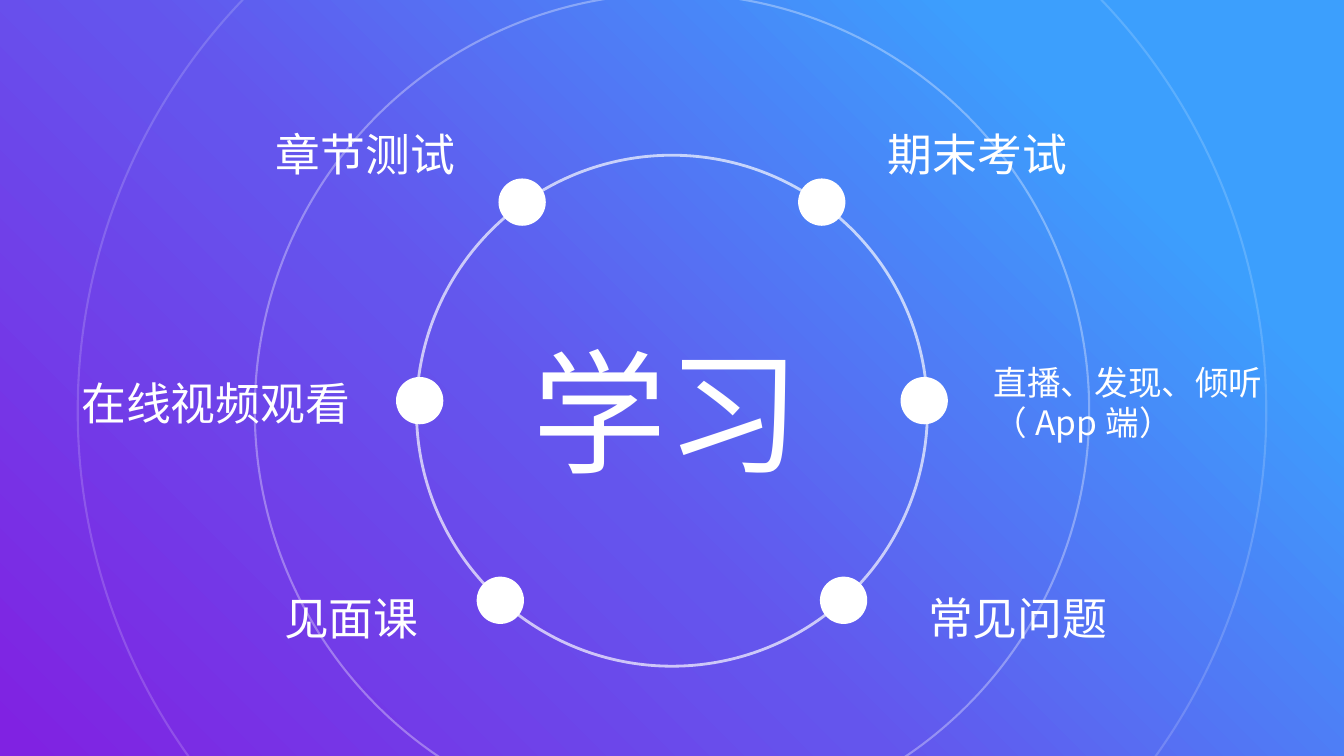
from lxml import etree
from pptx import Presentation
from pptx.dml.color import RGBColor
from pptx.enum.shapes import MSO_SHAPE
from pptx.enum.text import MSO_ANCHOR, MSO_AUTO_SIZE, PP_ALIGN
from pptx.oxml.ns import qn
from pptx.util import Pt

OVAL = MSO_SHAPE.OVAL
TOP = MSO_ANCHOR.TOP
LEFT = PP_ALIGN.LEFT
GROW = MSO_AUTO_SIZE.SHAPE_TO_FIT_TEXT

TITLE_ONLY = 5
FONT = "Noto Sans CJK SC"
COLOURS = {"white": "FFFFFF", "purple": "8022E2", "violet": "6455ED", "blue": "3C9FFD"}
GRADIENT = [(1, "purple"), (42, "violet"), (82, "blue")]

CENTRE = (480, 293.4)
# diameter, line width, opacity in percent
RINGS = [(365, 2, 68), (596, 1.5, 32), (849, 1.5, 17)]
DOT_SIZE = 33.8
# distance of each mirrored pair of dots from the centre: sideways, down
DOT_PAIRS = [(107, -149), (122.6, 135.4), (180.2, -7.2)]
# text, size, box (left, top, width, height)
TOPIC = ("学习", 96, (373, 231.8, 213.8, 123.8))
LABELS = [
    (" 在线视频观看", 32, (43.9, 265, 242.6, 46)),
    ("章节测试", 32, (190, 87.1, 160.6, 46)),
    ("见面课", 32, (195.8, 418.3, 130.3, 46)),
    ("期末考试", 32, (627.1, 87.1, 151.2, 46)),
    ("直播、发现、倾听（App端）", 24, (702.7, 254.9, 275.8, 65.5)),
    ("常见问题", 32, (655.9, 418.3, 162.7, 46)),
]


def colour(name):
    return RGBColor.from_string(COLOURS[name])


def paint_background(slide):
    fill = slide.background.fill
    fill.gradient()
    fill.gradient_angle = 45
    stops = slide.background._cSld.find(".//" + qn("a:gsLst"))
    for stop in list(stops):
        stops.remove(stop)
    for percent, name in GRADIENT:
        stop = etree.SubElement(stops, qn("a:gs"), pos=str(percent * 1000))
        etree.SubElement(stop, qn("a:srgbClr"), val=COLOURS[name])


def add_circle(shapes, centre, diameter):
    x, y = centre
    circle = shapes.add_shape(OVAL, Pt(x - diameter / 2), Pt(y - diameter / 2),
                              Pt(diameter), Pt(diameter))
    circle.shadow.inherit = False
    return circle


def add_ring(slide, centre, diameter, width, opacity):
    ring = add_circle(slide.shapes, centre, diameter)
    ring.fill.background()
    ring.line.width = Pt(width)
    ring.line.color.rgb = colour("white")
    line_colour = ring.line._ln.find(".//" + qn("a:srgbClr"))
    etree.SubElement(line_colour, qn("a:alpha"), val=str(opacity * 1000))


def add_dot_pair(slide, centre, across, down):
    x, y = centre
    group = slide.shapes.add_group_shape()
    for side in (-1, 1):
        dot = add_circle(group.shapes, (x + side * across, y + down), DOT_SIZE)
        dot.fill.solid()
        dot.fill.fore_color.rgb = colour("white")
        dot.line.fill.background()


def write_text(shape, text, size):
    frame = shape.text_frame
    frame_format = {"word_wrap": True, "auto_size": GROW, "vertical_anchor": TOP}
    for name, value in frame_format.items():
        setattr(frame, name, value)
    paragraph = frame.paragraphs[0]
    paragraph.alignment = LEFT
    run = paragraph.add_run()
    run.text = text
    for name, value in {"name": FONT, "size": Pt(size)}.items():
        setattr(run.font, name, value)
    run.font.color.rgb = colour("white")
    etree.SubElement(run.font._element, qn("a:ea"), typeface=FONT)


def place_title(slide, text, size, box):
    title = slide.shapes.title
    for name, value in zip(("left", "top", "width", "height"), box):
        setattr(title, name, Pt(value))
    write_text(title, text, size)


def add_label(slide, text, size, box):
    label = slide.shapes.add_textbox(*map(Pt, box))
    write_text(label, text, size)


def build_topic_slide(presentation):
    slide = presentation.slides.add_slide(presentation.slide_layouts[TITLE_ONLY])
    paint_background(slide)
    # Central topic and its orbiting labels
    place_title(slide, *TOPIC)
    for label in LABELS:
        add_label(slide, *label)
    # Concentric rings, then the dots on the inner one
    for ring in RINGS:
        add_ring(slide, CENTRE, *ring)
    for pair in DOT_PAIRS:
        add_dot_pair(slide, CENTRE, *pair)


def main():
    presentation = Presentation()
    presentation.slide_width = Pt(960)
    presentation.slide_height = Pt(540)
    build_topic_slide(presentation)
    presentation.save("out.pptx")


if __name__ == "__main__":
    main()
